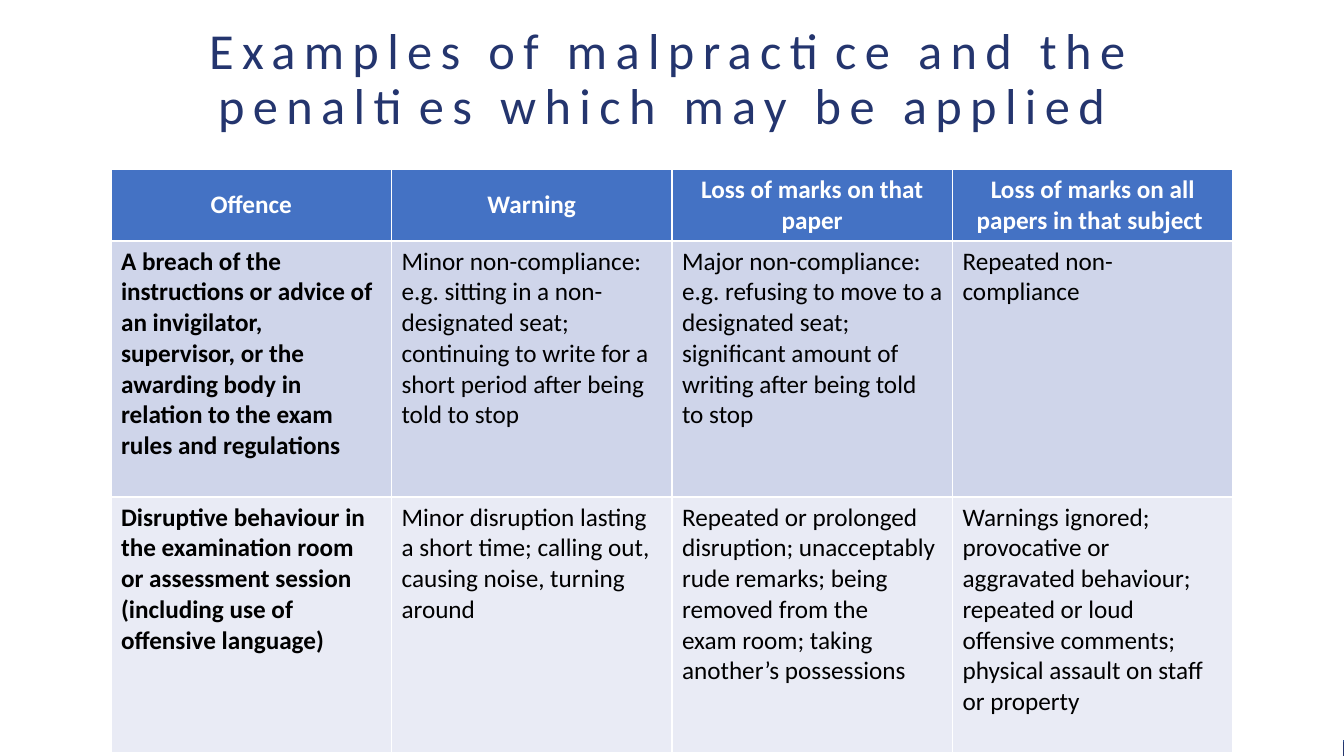
import pptx
import pptx.dml.color
import pptx.enum.shapes
import pptx.enum.text
import pptx.util

SLIDE_WIDTH, SLIDE_HEIGHT = 1344, 756
EMU_PER_PX = 12192000 / SLIDE_WIDTH
FONT = "Calibri"
COLOURS = {
    "title": "24356E",
    "bar line": "325491",
    "header": "4472C4",
    "odd row": "CFD5EA",
    "even row": "E9EBF5",
    "white": "FFFFFF",
    "black": "000000",
}
# The closing space takes part in the centring of the last line
TITLE = "Examples of malpractice and the penalties which may be applied "

# One list per row; line breaks separate the paragraphs of a cell
PENALTIES = [
    ["Offence", "Warning", "Loss of marks on that paper",
     "Loss of marks on all papers in that subject "],
    ["A breach of the instructions or advice of an invigilator, supervisor, or the "
     "awarding body in relation to the exam rules and regulations",
     "Minor non-compliance: e.g. sitting in a non-designated seat; continuing to write "
     "for a short period after being told to stop",
     "Major non-compliance: e.g. refusing to move to a designated seat; significant "
     "amount of writing after being told to stop",
     "Repeated non-compliance"],
    ["Disruptive behaviour in the examination room or assessment session\n"
     "(including use of offensive language)",
     "Minor disruption lasting a short time; calling out,\ncausing noise, turning\naround",
     "Repeated or prolonged\ndisruption; unacceptably\nrude remarks; being\n"
     "removed from the\nexam room; taking another’s possessions",
     "Warnings ignored;\nprovocative or aggravated behaviour; repeated or loud\n"
     "offensive comments;\nphysical assault on staff or property"],
]
ROW_HEIGHTS = [72, 256, 256]
ROW_FILLS = ["header", "odd row", "even row"]


def px(length):
    return pptx.util.Emu(round(length * EMU_PER_PX))


def colour(name):
    return pptx.dml.color.RGBColor.from_string(COLOURS[name])


def style_font(font, size, colour_name, bold=False):
    font.name = FONT
    font.size = pptx.util.Pt(size)
    font.bold = bold
    font.color.rgb = colour(colour_name)


def add_panel(page, left, top, width, height, fill, line=None):
    panel = page.shapes.add_shape(pptx.enum.shapes.MSO_SHAPE.RECTANGLE,
                                  px(left), px(top), px(width), px(height))
    panel.shadow.inherit = False
    panel.fill.solid()
    panel.fill.fore_color.rgb = colour(fill)
    if line:
        panel.line.color.rgb = colour(line)
        panel.line.width = pptx.util.Pt(1)
    else:
        panel.line.fill.background()


def add_title(page, left, top, width, height):
    box = page.shapes.add_textbox(px(left), px(top), px(width), px(height))
    frame = box.text_frame
    frame.word_wrap = True
    frame.vertical_anchor = pptx.enum.text.MSO_ANCHOR.MIDDLE
    para = frame.paragraphs[0]
    para.alignment = pptx.enum.text.PP_ALIGN.CENTER
    para.line_spacing = 0.9
    span = para.add_run()
    span.text = TITLE
    style_font(span.font, 36, "title")
    # Wide letter spacing, in hundredths of a point
    span.font._element.set("spc", "600")


def fill_cell(cell, text, row, column):
    is_header = row == 0
    cell.fill.solid()
    cell.fill.fore_color.rgb = colour(ROW_FILLS[row])
    cell.text = text
    if is_header:
        cell.vertical_anchor = pptx.enum.text.MSO_ANCHOR.MIDDLE
    for para in cell.text_frame.paragraphs:
        if is_header:
            para.alignment = pptx.enum.text.PP_ALIGN.CENTER
        style_font(para.font, 18, "white" if is_header else "black",
                   bold=is_header or column == 0)


def add_penalty_table(page, left, top, width):
    # The white cell lines come from the table style
    column_count = len(PENALTIES[0])
    table = page.shapes.add_table(len(PENALTIES), column_count, px(left), px(top),
                                  px(width), px(sum(ROW_HEIGHTS))).table
    for column in table.columns:
        column.width = px(width / column_count)
    for row, texts in enumerate(PENALTIES):
        table.rows[row].height = px(ROW_HEIGHTS[row])
        for column, text in enumerate(texts):
            fill_cell(table.cell(row, column), text, row, column)


def main():
    deck = pptx.Presentation()
    deck.slide_width, deck.slide_height = px(SLIDE_WIDTH), px(SLIDE_HEIGHT)
    page = deck.slides.add_slide(deck.slide_layouts[6])
    # Footer bar, of which the white panel leaves only the right edge in view
    add_panel(page, -47, 741, 1409, 62, "title", "bar line")
    add_panel(page, 0, 0, SLIDE_WIDTH - 1, SLIDE_HEIGHT, "white")
    add_title(page, 111, 19, 1122, 123)
    add_penalty_table(page, 111, 169, 1122)
    deck.save("out.pptx")


if __name__ == "__main__":
    main()
